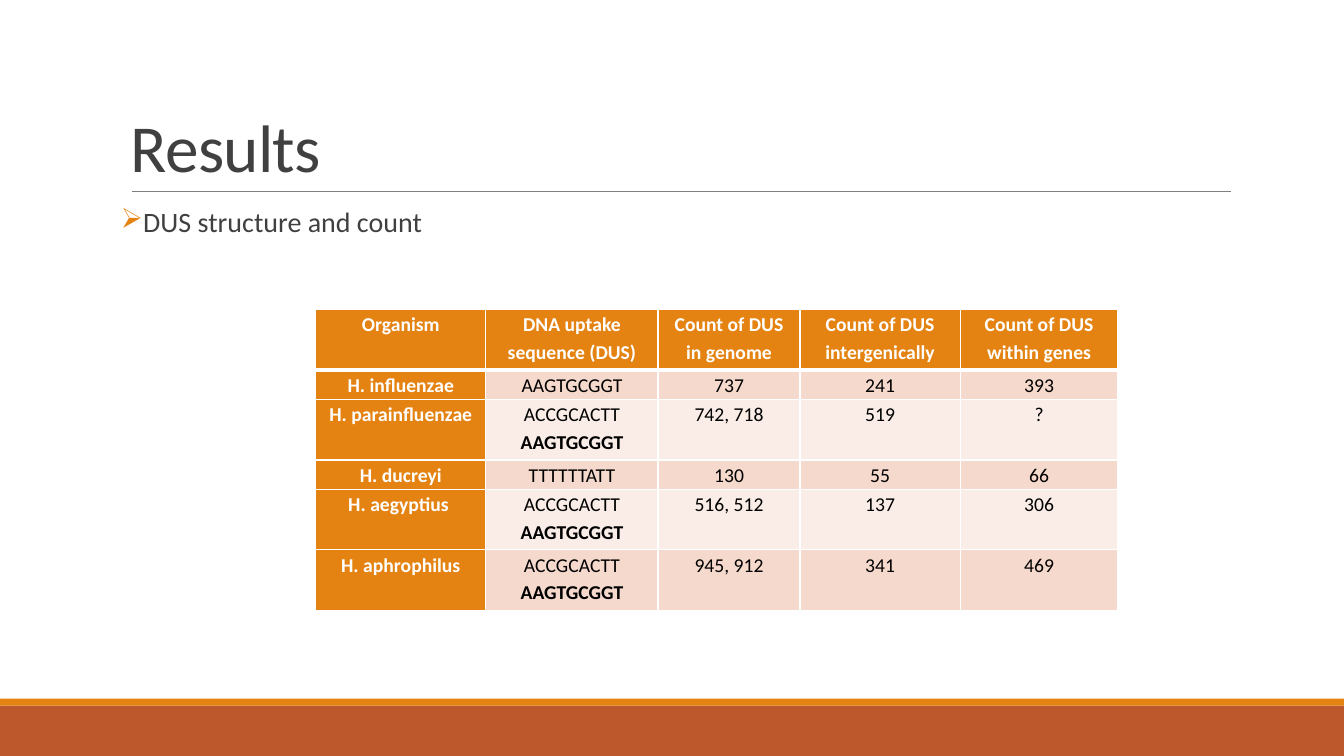
from dataclasses import dataclass
from typing import Any

from lxml.etree import SubElement
from pptx import Presentation
from pptx.dml.color import RGBColor
from pptx.enum.shapes import MSO_CONNECTOR, MSO_SHAPE
from pptx.enum.text import MSO_ANCHOR, PP_ALIGN
from pptx.oxml.ns import qn
from pptx.util import Pt

ORANGE, RUST, GREY = "E48312", "BD582C", "404040"
WHITE, BLACK = "FFFFFF", "000000"
BANDS = ("F5D9CC", "FAEDE7")


@dataclass
class Bar:
    top: float
    height: float
    fill: str


@dataclass
class Label:
    text: str
    box: tuple[float, float, float, float]
    size: float
    frame: dict[str, Any]
    para: dict[str, Any]


@dataclass
class Species:
    name: str
    dus: list[list[str]]  # paragraphs of sequences
    counts: tuple[str, str, str]


BARS = [Bar(504, 36, RUST), Bar(499, 5, ORANGE)]
TITLE = Label("Results", (86.4, 22.3, 792, 114.5), 48,
              {"vertical_anchor": MSO_ANCHOR.BOTTOM}, {"line_spacing": 0.85})
POINT = Label("DUS structure and count", (86.4, 145.4, 792, 316.8), 20,
              {"margin_left": 0, "margin_right": 0},
              {"line_spacing": 0.9, "space_after": Pt(2)})

HEADS = ["Organism", "DNA uptake sequence (DUS)", "Count of DUS in genome",
         "Count of DUS intergenically", "Count of DUS within genes"]
SPECIES = [
    Species("H. influenzae", [["AAGTGCGGT"]], ("737", "241", "393")),
    Species("H. parainfluenzae", [["ACCGCACTT ", "AAGTGCGGT"]], ("742, 718", "519", "?")),
    Species("H. ducreyi", [["TTTTTTATT"]], ("130", "55", "66")),
    Species("H. aegyptius ", [["ACCGCACTT"], ["AAGTGCGGT"]], ("516, 512", "137", "306")),
    Species("H. aphrophilus", [["ACCGCACTT ", "AAGTGCGGT"]], ("945, 912", "341", "469")),
]
WIDTHS = [121.6, 123, 101.4, 114.4, 112.8]
TALL, SHORT = 43.2, 21


def paint(code: str) -> RGBColor:
    return RGBColor.from_string(code)


def put(item: Any, values: dict[str, Any]) -> None:
    for key, value in values.items():
        setattr(item, key, value)


def style(font: Any, size: float, color: str, bold: bool = False) -> None:
    put(font, {"name": "Calibri", "size": Pt(size), "bold": bold})
    font.color.rgb = paint(color)


def add_bar(slide: Any, bar: Bar) -> None:
    shape = slide.shapes.add_shape(MSO_SHAPE.RECTANGLE, 0, Pt(bar.top), Pt(960), Pt(bar.height))
    shape.shadow.inherit = False
    shape.fill.solid()
    shape.fill.fore_color.rgb = paint(bar.fill)
    shape.line.fill.background()


def add_rule(slide: Any) -> None:
    rule = slide.shapes.add_connector(MSO_CONNECTOR.STRAIGHT, Pt(94.3), Pt(136.8), Pt(879), Pt(136.8))
    rule.line.color.rgb = paint("808080")
    rule.line.width = Pt(0.5)
    SubElement(rule.element.spPr, qn("a:effectLst"))


def add_label(slide: Any, label: Label) -> Any:
    frame = slide.shapes.add_textbox(*map(Pt, label.box)).text_frame
    put(frame, {"word_wrap": True, **label.frame})
    para = frame.paragraphs[0]
    put(para, label.para)
    run = para.add_run()
    run.text = label.text
    style(run.font, label.size, GREY)
    return para


def add_mark(para: Any) -> None:
    props = para._p.get_or_add_pPr()
    props.set("marL", str(Pt(7.2)))
    props.set("indent", str(-Pt(7.2)))
    tint = SubElement(props, qn("a:buClr"))
    SubElement(tint, qn("a:srgbClr"), val=ORANGE)
    SubElement(props, qn("a:buChar"), char="➢")


def edge(cell: Any, side: str, width: float) -> None:
    line = SubElement(cell._tc.get_or_add_tcPr(), qn(f"a:ln{side}"), w=str(Pt(width)))
    fill = SubElement(line, qn("a:solidFill"))
    SubElement(fill, qn("a:srgbClr"), val=WHITE)


def fill_cell(cell: Any, paras: list[list[str]], row: int, col: int) -> None:
    head = row == 0 or col == 0
    put(cell, {"margin_left": Pt(5), "margin_right": Pt(5), "margin_top": 0, "margin_bottom": 0})
    # Borders, thick under the header row
    thick = {(0, "B"), (1, "T")}
    for side in "LRTB":
        edge(cell, side, 3 if (row, side) in thick else 1)
    cell.fill.solid()
    cell.fill.fore_color.rgb = paint(ORANGE if head else BANDS[(row - 1) % 2])
    # Text: the second sequence is bold
    seen = 0
    for num, texts in enumerate(paras):
        frame = cell.text_frame
        para = frame.add_paragraph() if num else frame.paragraphs[0]
        put(para, {"alignment": PP_ALIGN.CENTER, "line_spacing": 1.15})
        for text in texts:
            run = para.add_run()
            run.text = text
            style(run.font, 14, WHITE if head else BLACK, head or seen > 0)
            seen += 1


def add_counts(slide: Any) -> None:
    rows = [[[[head]] for head in HEADS]]
    rows += [[[[kind.name]], kind.dus, *([[count]] for count in kind.counts)] for kind in SPECIES]
    highs = [TALL] + [TALL if sum(map(len, kind.dus)) > 1 else SHORT for kind in SPECIES]
    table = slide.shapes.add_table(len(rows), len(HEADS), Pt(225.5), Pt(221.2),
                                   Pt(sum(WIDTHS)), Pt(sum(highs))).table
    put(table, {"first_row": True, "first_col": True, "horz_banding": False})
    for column, width in zip(table.columns, WIDTHS):
        column.width = Pt(width)
    for row, high in enumerate(highs):
        table.rows[row].height = Pt(high)
        for col, paras in enumerate(rows[row]):
            fill_cell(table.cell(row, col), paras, row, col)


def main() -> None:
    deck = Presentation()
    put(deck, {"slide_width": Pt(960), "slide_height": Pt(540)})
    slide = deck.slides.add_slide(deck.slide_layouts[6])
    # Footer bars and title rule
    for bar in BARS:
        add_bar(slide, bar)
    add_rule(slide)
    # Title and bullet
    title = add_label(slide, TITLE)
    title.runs[0].font._element.set("spc", "-50")
    add_mark(add_label(slide, POINT))
    # Table of counts
    add_counts(slide)
    deck.save("out.pptx")


if __name__ == "__main__":
    main()
